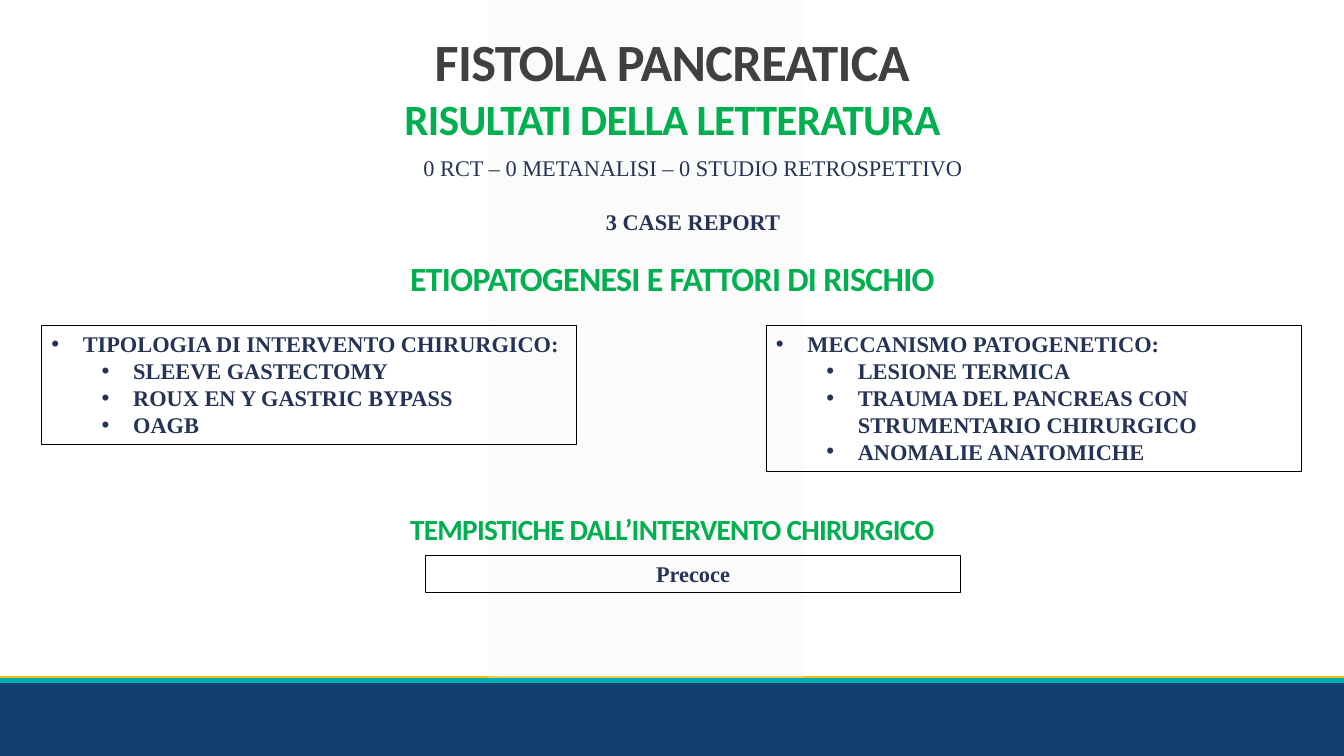
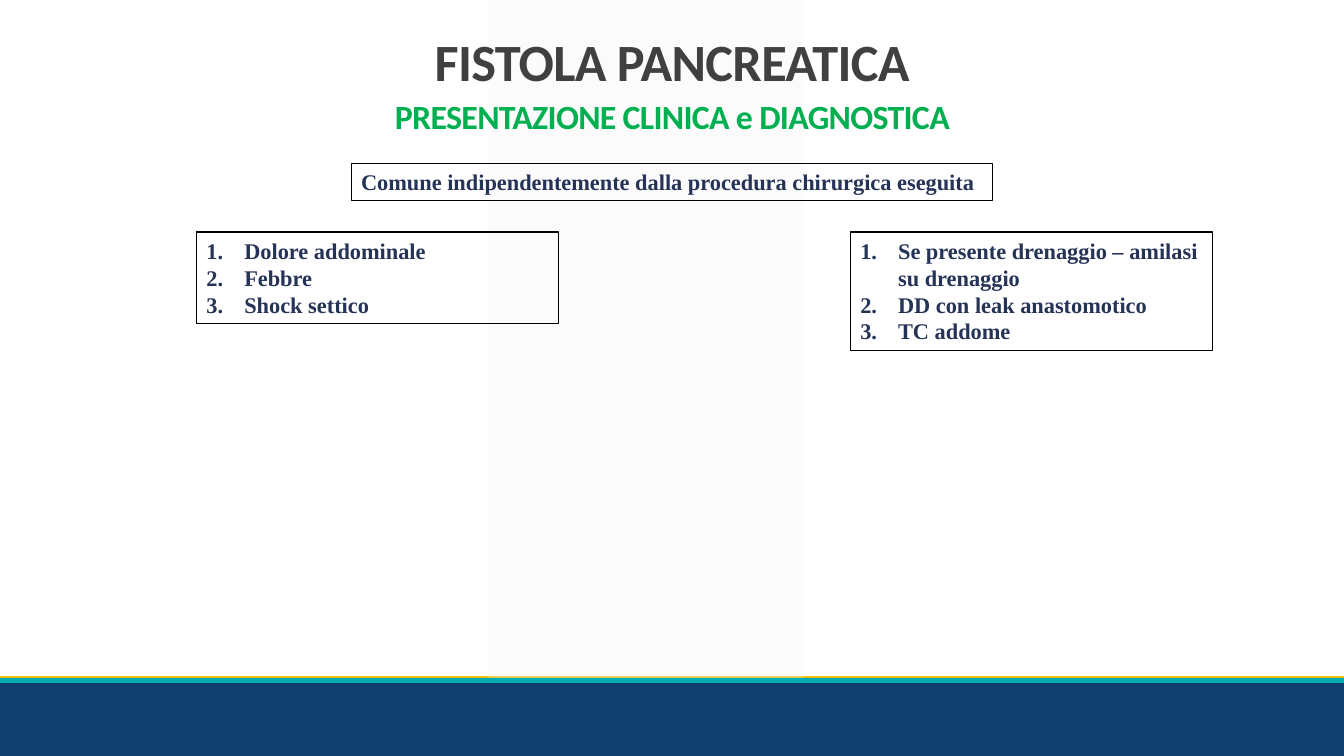
from lxml.etree import SubElement
from pptx import Presentation
from pptx.dml.color import RGBColor
from pptx.enum.shapes import MSO_SHAPE as Shape
from pptx.enum.text import MSO_ANCHOR as Anchor, PP_ALIGN as Align
from pptx.oxml.ns import qn
from pptx.util import Pt

NAVY = RGBColor(0x11, 0x3F, 0x6F)
TEAL = RGBColor(0x00, 0xAC, 0xB6)
AMBER = RGBColor(0xFF, 0xC0, 0x00)
PALE = RGBColor(0xF2, 0xF2, 0xF2)
GREY = RGBColor(0x40, 0x40, 0x40)
GREEN = RGBColor(0x00, 0xB0, 0x50)
INK = RGBColor(0x25, 0x33, 0x56)
BLACK = RGBColor(0x00, 0x00, 0x00)

WIDTH, HEIGHT = 960, 540
HEADING_FONT = "Calibri"
BODY_FONT = "Times New Roman"
BODY_SIZE = 16
BULLET = ("buChar", {"char": "•"})
NUMBER = ("buAutoNum", {"type": "arabicPeriod"})


def add_band(page, left, top, width, height, color, opacity=100):
    band = page.shapes.add_shape(Shape.RECTANGLE, Pt(left), Pt(top), Pt(width), Pt(height))
    band.shadow.inherit = False
    band.line.fill.background()
    band.fill.solid()
    band.fill.fore_color.rgb = color
    if opacity < 100:
        tint = band.fill._xPr.find(qn("a:solidFill"))[0]
        SubElement(tint, qn("a:alpha"), val=str(opacity * 1000))


def add_page(deck):
    page = deck.slides.add_slide(deck.slide_layouts[6])
    add_band(page, 0, 483, WIDTH, 3.6, AMBER)
    add_band(page, 0, 486, WIDTH, 54, NAVY)
    add_band(page, 349.2, 0, 224.6, 486, PALE, opacity=30)
    add_band(page, 0, 484.2, WIDTH, 3.6, TEAL)
    add_heading(page, "FISTOLA PANCREATICA", 29.5, 37.4, GREY)
    return page


def add_box(page, left, top, width, height):
    box = page.shapes.add_textbox(Pt(left), Pt(top), Pt(width), Pt(height))
    box.text_frame.word_wrap = True
    box.text_frame.vertical_anchor = Anchor.TOP
    return box


def style(para, font, size, color, bold=True):
    para.font.name = font
    para.font.size = Pt(size)
    para.font.color.rgb = color
    para.font.bold = bold


def add_heading(page, text, top, size, color=GREEN):
    box = add_box(page, 270, top, 420.5, 43.2)
    para = box.text_frame.paragraphs[0]
    para.alignment = Align.CENTER
    para.line_spacing = 0.7
    span = para.add_run()
    span.text = text
    style(para, HEADING_FONT, size, color)
    span.font._element.set("spc", "-50")


def add_paragraphs(box, texts):
    frame = box.text_frame
    for index, text in enumerate(texts):
        para = frame.add_paragraph() if index else frame.paragraphs[0]
        para.text = text
        yield index, para


def add_marker(para, marker, margin, hanging):
    tag, attributes = marker
    props = para._p.get_or_add_pPr()
    props.set("marL", str(Pt(margin)))
    props.set("indent", str(-Pt(hanging)))
    SubElement(props, qn("a:buFont"), typeface="Arial" if marker is BULLET else "+mj-lt")
    SubElement(props, qn(f"a:{tag}"), attributes)


def add_framed_box(page, left, top, width, height):
    box = add_box(page, left, top, width, height)
    box.line.color.rgb = BLACK
    box.line.width = Pt(0.75)
    return box


def add_framed_line(page, text, left, top, width, alignment):
    box = add_framed_box(page, left, top, width, 26.7)
    for _, para in add_paragraphs(box, [text]):
        para.alignment = alignment
        style(para, BODY_FONT, BODY_SIZE, INK)


def add_bullet_box(page, left, height, texts):
    box = add_framed_box(page, left, 232.5, 382.5, height)
    for index, para in add_paragraphs(box, texts):
        para.level = 1 if index else 0
        add_marker(para, BULLET, 58.5 if index else 22.5, 22.5)
        style(para, BODY_FONT, BODY_SIZE, INK)


def add_numbered_box(page, left, height, texts):
    box = add_framed_box(page, left, 165.7, 258.5, height)
    for _, para in add_paragraphs(box, texts):
        add_marker(para, NUMBER, 27, 27)
        style(para, BODY_FONT, BODY_SIZE, INK)


def add_study_counts(page, texts):
    box = add_box(page, 30, 106.5, 930, 65.5)
    for index, para in add_paragraphs(box, texts):
        para.alignment = Align.CENTER
        if index:
            para.space_before = Pt(19.3)
        style(para, BODY_FONT, BODY_SIZE, INK, bold=index > 0)


def build_literature(deck):
    page = add_page(deck)
    add_heading(page, "RISULTATI DELLA LETTERATURA", 72.7, 30.8)
    add_study_counts(page, ["0 RCT – 0 METANALISI – 0 STUDIO RETROSPETTIVO", "3 CASE REPORT"])
    add_heading(page, "ETIOPATOGENESI E FATTORI DI RISCHIO", 188.6, 24.2)
    add_bullet_box(page, 29.6, 85, [
        "TIPOLOGIA DI INTERVENTO CHIRURGICO:",
        "SLEEVE GASTECTOMY",
        "ROUX EN Y GASTRIC BYPASS",
        "OAGB",
    ])
    add_bullet_box(page, 547.2, 104.4, [
        "MECCANISMO PATOGENETICO:",
        "LESIONE TERMICA",
        "TRAUMA DEL PANCREAS CON STRUMENTARIO CHIRURGICO",
        "ANOMALIE ANATOMICHE",
    ])
    add_heading(page, "TEMPISTICHE DALL’INTERVENTO CHIRURGICO", 368.6, 20.9)
    add_framed_line(page, "Precoce", 303.8, 396.7, 382.5, Align.CENTER)


def build_presentation(deck):
    page = add_page(deck)
    add_heading(page, "PRESENTAZIONE CLINICA e DIAGNOSTICA", 72.7, 24.2)
    add_framed_line(page, "Comune indipendentemente dalla procedura chirurgica eseguita",
                    250.8, 116.6, 458, Align.LEFT)
    add_numbered_box(page, 140.4, 65.5, ["Dolore addominale", "Febbre", "Shock settico"])
    add_numbered_box(page, 607.4, 85, [
        "Se presente drenaggio – amilasi su drenaggio",
        "DD con leak anastomotico",
        "TC addome",
    ])


def main():
    deck = Presentation()
    deck.slide_width, deck.slide_height = Pt(WIDTH), Pt(HEIGHT)
    build_literature(deck)
    build_presentation(deck)
    deck.save("out.pptx")


if __name__ == "__main__":
    main()
